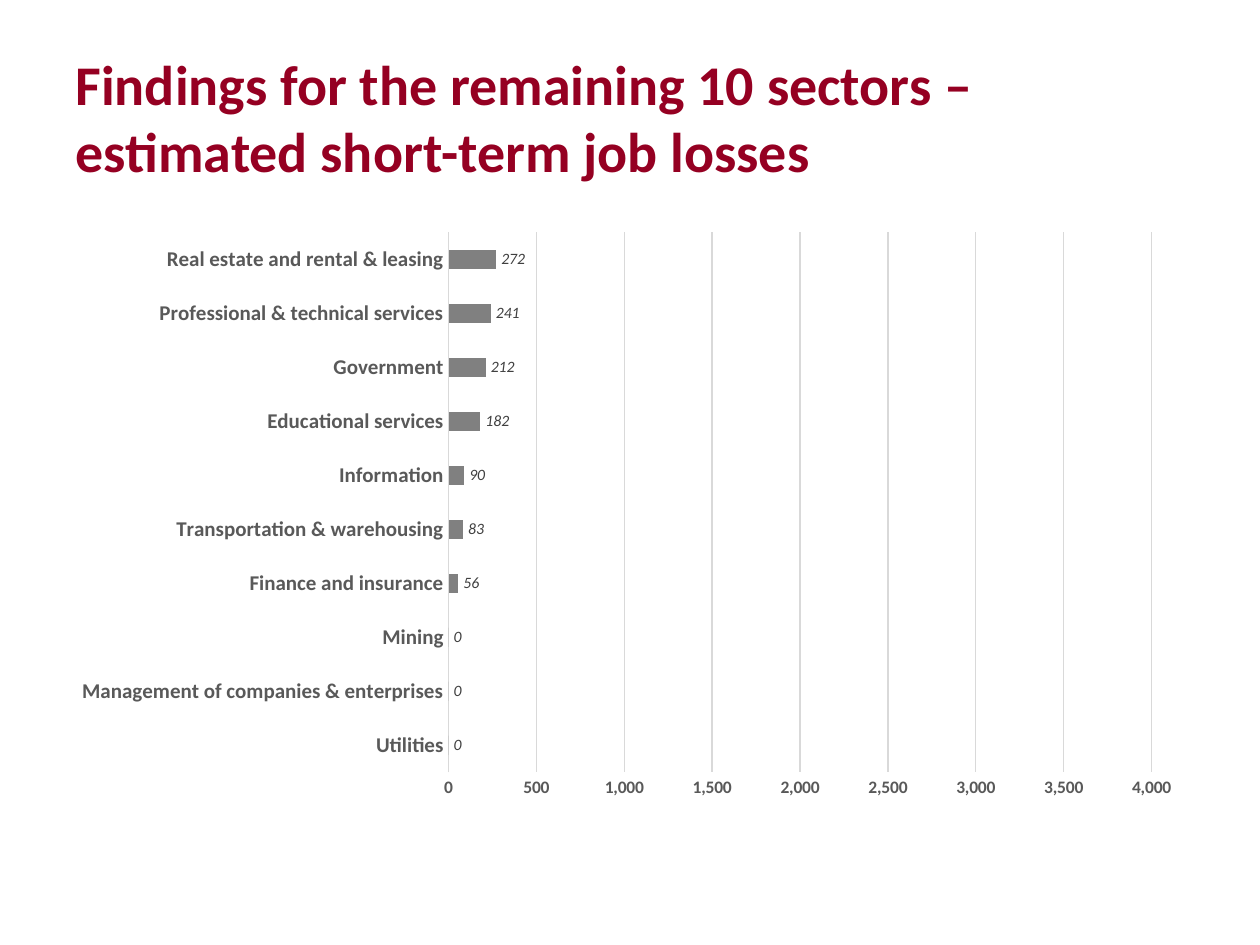
from lxml import etree
from pptx import Presentation
from pptx.chart.data import CategoryChartData
from pptx.dml.color import RGBColor
from pptx.enum.chart import XL_CHART_TYPE as CT, XL_LABEL_POSITION as LP, XL_TICK_MARK as TM
from pptx.enum.text import MSO_ANCHOR, MSO_AUTO_SIZE, PP_ALIGN
from pptx.oxml.ns import qn
from pptx.util import Inches, Pt

COLORS = {"title": "950022", "bar": "808080", "axis": "595959",
          "label": "404040", "grid": "D9D9D9"}
JOB_LOSSES = [
    ("Utilities", 0),
    ("Management of companies & enterprises", 0),
    ("Mining", 0),
    ("Finance and insurance", 56),
    ("Transportation & warehousing", 83),
    ("Information", 90),
    ("Educational services", 182),
    ("Government", 212),
    ("Professional & technical services", 241),
    ("Real estate and rental & leasing", 272),
]
PLOT_AREA = {"x": 0.34, "y": 0.02, "w": 0.62, "h": 0.92}


def rgb(name):
    return RGBColor.from_string(COLORS[name])


def style_font(font, size, color, bold=False, italic=False):
    font.name = "Calibri"
    font.size = Pt(size)
    font.bold = bold
    font.italic = italic
    font.color.rgb = rgb(color)


def write_text(tf, text, align=PP_ALIGN.LEFT, **fmt):
    p = tf.paragraphs[0]
    p.alignment = align
    r = p.add_run()
    r.text = text
    style_font(r.font, **fmt)


def add_title(slide, box):
    sp = slide.shapes.title
    sp.left, sp.top, sp.width, sp.height = box
    tf = sp.text_frame
    tf.word_wrap = True
    tf.auto_size = MSO_AUTO_SIZE.NONE
    tf.vertical_anchor = MSO_ANCHOR.MIDDLE
    write_text(tf, "Findings for the remaining 10 sectors – estimated short-term job losses",
               size=32, color="title", bold=True)


def style_axis(axis, size):
    axis.major_tick_mark = axis.minor_tick_mark = TM.NONE
    style_font(axis.tick_labels.font, size, "axis", bold=True)


def style_line(line):
    line.color.rgb = rgb("grid")
    line.width = Pt(0.75)


def place_plot(chart):
    plot_area = chart.plots[0]._element.getparent()
    layout = plot_area.find(qn("c:layout"))
    if layout is None:
        layout = etree.Element(qn("c:layout"))
        plot_area.insert(0, layout)
    manual = etree.SubElement(layout, qn("c:manualLayout"))
    settings = {"layoutTarget": "inner", "xMode": "edge", "yMode": "edge", **PLOT_AREA}
    for tag, val in settings.items():
        etree.SubElement(manual, qn(f"c:{tag}")).set("val", str(val))


def add_losses_chart(slide, box):
    data = CategoryChartData(number_format="#,##0")
    data.categories = [sector for sector, _ in JOB_LOSSES]
    data.add_series("Series 1", [loss for _, loss in JOB_LOSSES])
    chart = slide.shapes.add_chart(CT.BAR_CLUSTERED, *box, data).chart
    chart.has_legend = chart.has_title = False
    style_font(chart.font, 10, "axis")

    style_axis(chart.category_axis, 12)
    style_line(chart.category_axis.format.line)
    axis = chart.value_axis
    style_axis(axis, 10)
    axis.format.line.fill.background()
    axis.minimum_scale, axis.maximum_scale, axis.major_unit = 0, 4000, 500
    axis.tick_labels.number_format = "#,##0"
    axis.tick_labels.number_format_is_linked = False
    style_line(axis.major_gridlines.format.line)

    plot = chart.plots[0]
    plot.gap_width = 182
    plot.vary_by_categories = False
    series = plot.series[0]
    series.format.fill.solid()
    series.format.fill.fore_color.rgb = rgb("bar")
    labels = series.data_labels
    labels.show_value = True
    labels.number_format = "#,##0"
    labels.number_format_is_linked = False
    labels.position = LP.OUTSIDE_END
    style_font(labels.font, 9, "label", italic=True)
    place_plot(chart)


def main():
    prs = Presentation()
    prs.slide_width, prs.slide_height = Inches(10), Inches(7.5)
    slide = prs.slides.add_slide(prs.slide_layouts[5])
    add_title(slide, [Inches(v) for v in (0.5, 0.3, 9, 1.25)])
    add_losses_chart(slide, [Inches(v) for v in (0.5, 1.75, 9, 4.66)])
    prs.save("out.pptx")


if __name__ == "__main__":
    main()
